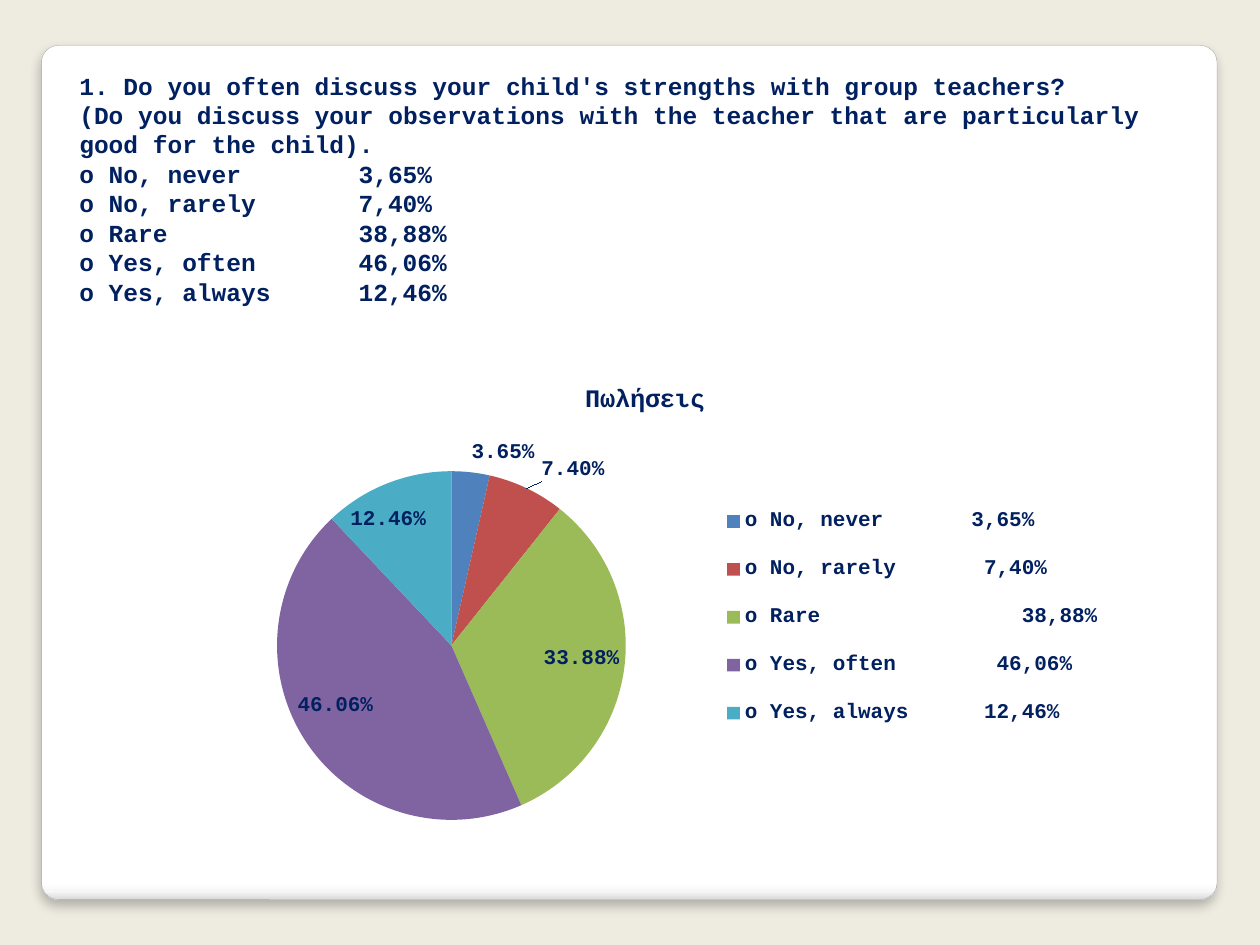
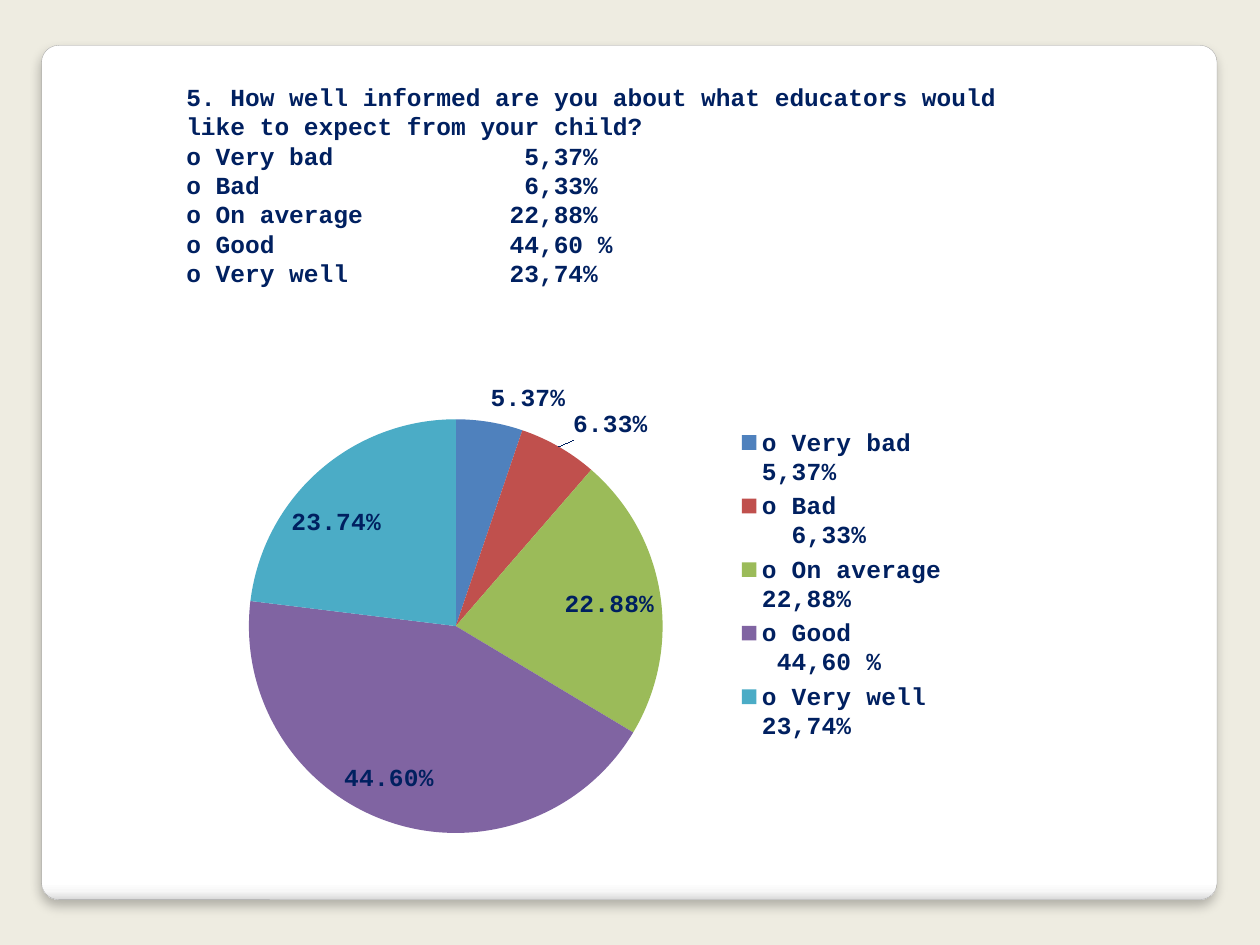
import pptx
import pptx.chart.data
import pptx.dml.color
import pptx.enum.chart
import pptx.enum.shapes
import pptx.enum.text
import pptx.oxml
import pptx.oxml.ns
import pptx.util

Pt = pptx.util.Pt
RGBColor = pptx.dml.color.RGBColor
qn = pptx.oxml.ns.qn
NAMESPACES = pptx.oxml.ns.nsdecls("a", "c")

FONT = "Courier New"
NAVY = RGBColor(0x00, 0x20, 0x60)
BEIGE = RGBColor(0xEE, 0xEC, 0xE1)
WHITE = RGBColor(0xFF, 0xFF, 0xFF)
PALE_GREY = RGBColor(0xF7, 0xF7, 0xF7)
EDGE_GREY = RGBColor(0xDA, 0xDA, 0xDA)
BORDER_GREY = RGBColor(0xA4, 0xA4, 0xA4)
SLICE_COLORS = [
    RGBColor(0x4F, 0x81, 0xBD),
    RGBColor(0xC0, 0x50, 0x4D),
    RGBColor(0x9B, 0xBB, 0x59),
    RGBColor(0x80, 0x64, 0xA2),
    RGBColor(0x4B, 0xAC, 0xC6),
]
CARD_STOPS = [(0, WHITE), (98, WHITE), (99, PALE_GREY), (100, EDGE_GREY)]
CHARACTER_WIDTH = 8.4

QUESTIONS = [
    {
        "wording": [
            "1. Do you often discuss your child's strengths with group teachers?",
            "(Do you discuss your observations with the teacher that are "
            "particularly good for the child).",
        ],
        "answers": [
            ("o No, never", "3,65%", 19, 7, 0.0365),
            ("o No, rarely", "7,40%", 19, 7, 0.074),
            ("o Rare", "38,88%", 19, 16, 0.3388),
            ("o Yes, often", "46,06%", 19, 8, 0.4606),
            ("o Yes, always", "12,46%", 19, 6, 0.1246),
        ],
        "text_box": (36.72, 37.44, 640.8, 142.56),
        "margins": (8.64, 2.88, 7.2, 3.6),
        "chart_box": (105.12, 207.36, 527.04, 269.28),
        "chart_size": 12,
        "series": "Πωλήσεις",
        "titled": True,
        "pie_area": (0.1, 0.23, 0.38, 0.74),
        "legend_area": (0.58, 0.26, 0.42, 0.56),
    },
    {
        "wording": [
            "5. How well informed are you about what educators would like "
            "to expect from your child?",
        ],
        "answers": [
            ("o Very bad", "5,37%", 23, 13, 0.0537),
            ("o Bad", "6,33%", 23, 20, 0.0633),
            ("o On average", "22,88%", 22, 8, 0.2288),
            ("o Good", "44,60 %", 22, 18, 0.446),
            ("o Very well", "23,74%", 22, 11, 0.2374),
        ],
        "text_box": (99.36, 43.2, 486, 126),
        "margins": (7.2, 3.6, 7.2, 3.6),
        "chart_box": (115.92, 185.04, 516.24, 303.12),
        "chart_size": 14,
        "series": "Series 1",
        "titled": False,
        "pie_area": (0.05, 0.18, 0.46, 0.78),
        "legend_area": (0.59, 0.19, 0.4, 0.61),
    },
]


def write_text(frame, lines, size=14, line_height=None, tabs=None):
    for index, line in enumerate(lines):
        paragraph = frame.add_paragraph() if index else frame.paragraphs[0]
        if line_height:
            paragraph.line_spacing = Pt(line_height)
        if tabs and tabs[index]:
            position = Pt(tabs[index] * CHARACTER_WIDTH)
            paragraph._p.get_or_add_pPr().append(pptx.oxml.parse_xml(
                f'<a:tabLst {NAMESPACES}><a:tab pos="{position}" algn="l"/></a:tabLst>'))
        run = paragraph.add_run()
        run.text = line
        run.font.name = FONT
        run.font.size = Pt(size)
        run.font.bold = True
        run.font.color.rgb = NAVY


def place_in_chart(part, area, index, target=""):
    for layout in part.findall(qn("c:layout")):
        part.remove(layout)
    modes = '<c:xMode val="edge"/><c:yMode val="edge"/>'
    sizes = "".join(f'<c:{key} val="{value}"/>' for key, value in zip("xywh", area))
    part.insert(index, pptx.oxml.parse_xml(
        f"<c:layout {NAMESPACES}><c:manualLayout>{target}{modes}{sizes}"
        "</c:manualLayout></c:layout>"))


presentation = pptx.Presentation()
presentation.slide_width = Pt(720)
presentation.slide_height = Pt(540)

for question in QUESTIONS:
    slide = presentation.slides.add_slide(presentation.slide_layouts[6])
    slide.background.fill.solid()
    slide.background.fill.fore_color.rgb = BEIGE

    card = slide.shapes.add_shape(
        pptx.enum.shapes.MSO_SHAPE.ROUNDED_RECTANGLE,
        Pt(23.76), Pt(25.92), Pt(671.76), Pt(488.16))
    card.adjustments[0] = 0.02
    card.fill.gradient()
    card.fill.gradient_angle = 270
    stops = card._element.spPr.find(".//" + qn("a:gsLst"))
    for stop in list(stops):
        stops.remove(stop)
    for percent, color in CARD_STOPS:
        stops.append(pptx.oxml.parse_xml(
            f'<a:gs {NAMESPACES} pos="{percent * 1000}"><a:srgbClr val="{color}"/></a:gs>'))
    card.line.color.rgb = BORDER_GREY
    card.line.width = Pt(0.16)
    card.shadow.inherit = False
    card._element.spPr.find(qn("a:effectLst")).append(pptx.oxml.parse_xml(
        f'<a:outerShdw {NAMESPACES} blurRad="{Pt(6)}" dist="{Pt(4)}" dir="5400000" '
        'algn="t" rotWithShape="0"><a:srgbClr val="000000"><a:alpha val="25000"/>'
        "</a:srgbClr></a:outerShdw>"))

    answers = question["answers"]
    question_box = slide.shapes.add_textbox(*map(Pt, question["text_box"]))
    frame = question_box.text_frame
    frame.word_wrap = True
    frame.auto_size = pptx.enum.text.MSO_AUTO_SIZE.SHAPE_TO_FIT_TEXT
    (frame.margin_left, frame.margin_top,
     frame.margin_right, frame.margin_bottom) = map(Pt, question["margins"])
    write_text(
        frame,
        question["wording"] + [f"{answer}\t{share}" for answer, share, *_ in answers],
        line_height=16.8,
        tabs=[None] * len(question["wording"]) + [column for _, _, column, _, _ in answers])

    results = pptx.chart.data.CategoryChartData(number_format="0.00%")
    results.categories = [
        answer + " " * gap + share for answer, share, _, gap, _ in answers]
    results.add_series(question["series"], [value for *_, value in answers])
    chart = slide.shapes.add_chart(
        pptx.enum.chart.XL_CHART_TYPE.PIE,
        *map(Pt, question["chart_box"]), results).chart
    chart.font.name = FONT
    chart.font.size = Pt(question["chart_size"])
    chart.font.bold = True
    chart.font.color.rgb = NAVY

    chart.has_title = question["titled"]
    if question["titled"]:
        write_text(chart.chart_title.text_frame, [question["series"]], size=14.4)

    chart.has_legend = True
    chart.legend.position = pptx.enum.chart.XL_LEGEND_POSITION.RIGHT
    chart.legend.include_in_layout = False
    place_in_chart(chart.element.find(".//" + qn("c:legend")), question["legend_area"], 1)
    place_in_chart(chart.element.find(".//" + qn("c:plotArea")), question["pie_area"], 0,
                   '<c:layoutTarget val="inner"/>')

    chart.plots[0].vary_by_categories = True
    pie = chart.plots[0].series[0]
    for index, color in enumerate(SLICE_COLORS):
        slice_fill = pie.points[index].format.fill
        slice_fill.solid()
        slice_fill.fore_color.rgb = color
    labels = pie.data_labels
    labels.show_value = True
    labels.number_format = "0.00%"
    labels.number_format_is_linked = False
    labels.position = pptx.enum.chart.XL_LABEL_POSITION.BEST_FIT

presentation.save("out.pptx")
